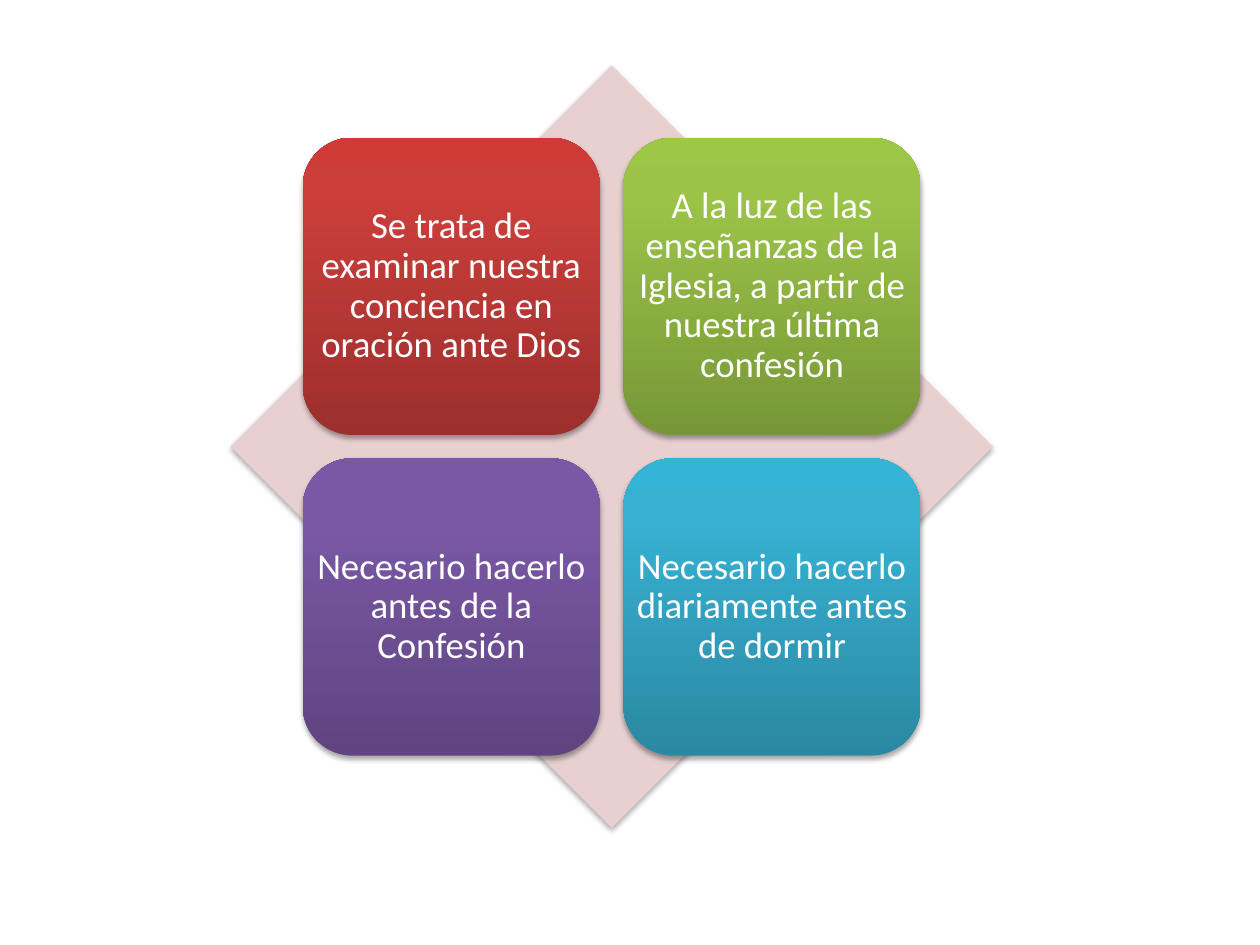
from copy import deepcopy
from dataclasses import dataclass

from lxml.etree import SubElement
from pptx import Presentation
from pptx.dml.color import RGBColor
from pptx.enum.shapes import MSO_SHAPE
from pptx.enum.text import MSO_ANCHOR, PP_ALIGN
from pptx.oxml.ns import qn
from pptx.shapes.autoshape import Shape
from pptx.shapes.shapetree import GroupShapes
from pptx.util import Inches, Pt

WHITE = RGBColor(0xFF, 0xFF, 0xFF)
PALE_ROSE = RGBColor(0xE8, 0xD0, 0xD0)
REDS = (RGBColor(0x9C, 0x2F, 0x2D), RGBColor(0xCB, 0x3E, 0x3A), RGBColor(0xCE, 0x3B, 0x37))
GREENS = (RGBColor(0x77, 0x97, 0x37), RGBColor(0x9B, 0xC3, 0x48), RGBColor(0x9D, 0xC7, 0x46))
PURPLES = (RGBColor(0x5F, 0x44, 0x80), RGBColor(0x7B, 0x58, 0xA6), RGBColor(0x7C, 0x57, 0xA8))
BLUES = (RGBColor(0x2A, 0x88, 0xA2), RGBColor(0x37, 0xB1, 0xD2), RGBColor(0x34, 0xB4, 0xD6))
STOPS = (0, 0.8, 1)

# Diamond and the two-by-two grid centred on it
DIAMOND_LEFT, DIAMOND_TOP, DIAMOND_SIZE = Inches(1.83), Inches(0.52), Inches(6.05)
TILE_SIZE = Inches(2.36)
TILE_PITCH = Inches(2.545)
GRID_OFFSET = (DIAMOND_SIZE - TILE_SIZE - TILE_PITCH) // 2


@dataclass(frozen=True)
class Tile:
    column: int
    row: int
    colors: tuple[RGBColor, RGBColor, RGBColor]
    text: str


TILES = (
    Tile(0, 0, REDS, "Se trata de examinar nuestra conciencia en oración ante Dios"),
    Tile(1, 0, GREENS, "A la luz de las enseñanzas de la Iglesia, a partir de nuestra última confesión"),
    Tile(0, 1, PURPLES, "Necesario hacerlo antes de la Confesión"),
    Tile(1, 1, BLUES, "Necesario hacerlo diariamente antes de dormir"),
)


def add_soft_shadow(shape: Shape) -> None:
    shape.shadow.inherit = False
    effects = shape._element.spPr.find(qn("a:effectLst"))
    shadow = SubElement(effects, qn("a:outerShdw"), blurRad=str(Pt(3.1)),
                        dist=str(Pt(1.8)), dir="5400000", rotWithShape="0")
    color = SubElement(shadow, qn("a:srgbClr"), val="000000")
    SubElement(color, qn("a:alpha"), val="35000")


def fill_gradient(shape: Shape, colors: tuple[RGBColor, ...]) -> None:
    """Fill from the bottom up with one colour per stop."""
    shape.fill.gradient()
    shape.fill.gradient_angle = 90
    stop_list = shape._element.spPr.find(f".//{qn('a:gsLst')}")
    stop_list.append(deepcopy(stop_list[-1]))
    for stop, position, color in zip(shape.fill.gradient_stops, STOPS, colors):
        stop.position = position
        stop.color.rgb = color


def add_tile(shapes: GroupShapes, tile: Tile) -> None:
    frame = (DIAMOND_LEFT + GRID_OFFSET + tile.column * TILE_PITCH,
             DIAMOND_TOP + GRID_OFFSET + tile.row * TILE_PITCH,
             TILE_SIZE, TILE_SIZE)
    card = shapes.add_shape(MSO_SHAPE.ROUNDED_RECTANGLE, *frame)
    card.line.fill.background()
    fill_gradient(card, tile.colors)
    add_soft_shadow(card)

    # The label spans the whole card, beyond the inset of its round corners
    box = shapes.add_textbox(*frame).text_frame
    box.word_wrap = True
    box.vertical_anchor = MSO_ANCHOR.MIDDLE
    box.margin_left = box.margin_right = box.margin_top = box.margin_bottom = Inches(0.09)
    para = box.paragraphs[0]
    para.text = tile.text
    para.alignment = PP_ALIGN.CENTER
    para.line_spacing = 0.9
    para.space_after = Pt(7.35)
    para.font.name = "Calibri"
    para.font.size = Pt(21)
    para.font.color.rgb = WHITE


def main() -> None:
    deck = Presentation()
    deck.slide_width, deck.slide_height = Inches(10), Inches(7.5)
    page = deck.slides.add_slide(deck.slide_layouts.get_by_name("Blank"))
    matrix = page.shapes.add_group_shape().shapes

    # Background diamond
    diamond = matrix.add_shape(MSO_SHAPE.DIAMOND, DIAMOND_LEFT, DIAMOND_TOP,
                               DIAMOND_SIZE, DIAMOND_SIZE)
    diamond.fill.solid()
    diamond.fill.fore_color.rgb = PALE_ROSE
    diamond.line.fill.background()
    add_soft_shadow(diamond)

    # Four cards
    for tile in TILES:
        add_tile(matrix, tile)

    deck.save("out.pptx")


if __name__ == "__main__":
    main()
